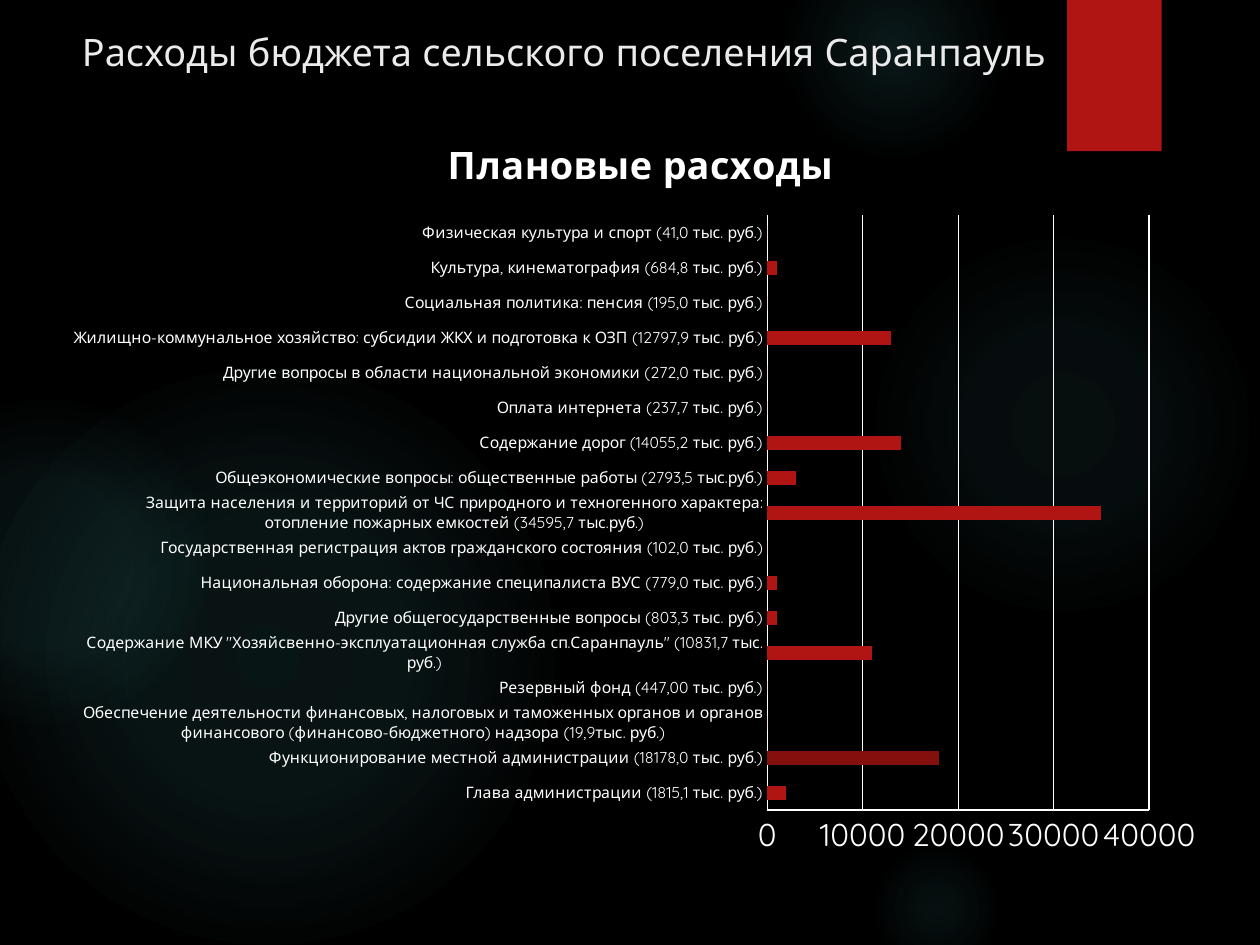
from lxml import etree
from pptx import Presentation
from pptx import util as u
from pptx.chart.data import CategoryChartData
from pptx.dml.color import RGBColor
from pptx.enum import chart as ch, shapes, text
from pptx.oxml import parse_xml
from pptx.oxml.ns import nsdecls, qn

TITLE = "Расходы бюджета сельского поселения Саранпауль"
CHART_TITLE = "Плановые расходы"
EXPENSES = [
    ("Глава администрации (1815,1 тыс. руб.)", 2000),
    ("Функционирование местной администрации (18178,0 тыс. руб.)", 18000),
    ("Обеспечение деятельности финансовых, налоговых и таможенных органов и органов "
     "финансового (финансово-бюджетного) надзора (19,9тыс. руб.)", 0),
    ("Резервный фонд (447,00 тыс. руб.)", 0),
    ('Содержание МКУ "Хозяйсвенно-эксплуатационная служба сп.Саранпауль" '
     "(10831,7 тыс. руб.)", 11000),
    ("Другие общегосударственные вопросы (803,3 тыс. руб.)", 1000),
    ("Национальная оборона: содержание специпалиста ВУС (779,0 тыс. руб.)", 1000),
    ("Государственная регистрация актов гражданского состояния (102,0 тыс. руб.)", 0),
    ("Защита населения и территорий от ЧС природного и техногенного характера: "
     "отопление пожарных емкостей (34595,7 тыс.руб.)", 35000),
    ("Общеэкономические вопросы: общественные работы (2793,5 тыс.руб.)", 3000),
    ("Содержание дорог (14055,2 тыс. руб.)", 14000),
    ("Оплата интернета (237,7 тыс. руб.)", 0),
    ("Другие вопросы в области национальной экономики (272,0 тыс. руб.)", 0),
    ("Жилищно-коммунальное хозяйство: субсидии ЖКХ и подготовка к ОЗП "
     "(12797,9 тыс. руб.)", 13000),
    ("Социальная политика: пенсия (195,0 тыс. руб.)", 0),
    ("Культура, кинематография (684,8 тыс. руб.)", 1000),
    ("Физическая культура и спорт (41,0 тыс. руб.)", 0),
]
DARK_POINT = 1
GLOWS = [
    (6.89, 1.83, 3.08, ((0, 7), (36, 6), (69, 0))),
    (6.22, -0.5, 1.75, ((0, 14), (36, 7), (73, 0))),
    (6.89, 6.67, 1.08, ((0, 9), (36, 5), (66, 0))),
    (-0.17, 2.92, 4.58, ((0, 11), (36, 10), (75, 0))),
    (-0.92, 3.17, 2.58, ((0, 8), (36, 8), (72, 0))),
]
THEME = dict(font="Quicksand", bg="000000", glow="50B9C1", accent="B01513", dark="84100E",
             title="EBEBEB", light="FFFFFF", title_size=21.6, axis_size=18, label_size=9)
CHART_BOX = (0.5, 0.86, 9.17, 6.04)
PLOT_BOX = (6.09, 1.71, 3.03, 4.72)


def rgb(name):
    return RGBColor.from_string(THEME[name])


def box(*lengths):
    return [u.Inches(v) for v in lengths]


def style(font, size, color, bold=False):
    font.name, font.size, font.bold = THEME["font"], u.Pt(THEME[size]), bold
    font.color.rgb = rgb(color)


def add_text(tf, content, size="title_size", color="title", bold=False, align=None):
    p = tf.paragraphs[0]
    p.alignment = align
    r = p.add_run()
    r.text = content
    style(r.font, size, color, bold)


def add_shape(s, kind, *lengths):
    sp = s.shapes.add_shape(kind, *box(*lengths))
    sp.shadow.inherit = False
    sp.line.fill.background()
    return sp


def add_glow(s, x, y, d, stops):
    sp = add_shape(s, shapes.MSO_SHAPE.OVAL, x, y, d, d)
    sp.fill.background()
    gs = "".join(f'<a:gs pos="{pos * 1000}"><a:srgbClr val="{THEME["glow"]}">'
                 f'<a:alpha val="{alpha * 1000}"/></a:srgbClr></a:gs>' for pos, alpha in stops)
    grad = parse_xml(f'<a:gradFill {nsdecls("a")}><a:gsLst>{gs}</a:gsLst><a:path path="circle">'
                     '<a:fillToRect l="50000" t="50000" r="50000" b="50000"/></a:path></a:gradFill>')
    no_fill = sp.element.spPr.find(qn("a:noFill"))
    no_fill.getparent().replace(no_fill, grad)


def place_plot(chart):
    area = chart.element.chart.plotArea
    for old in area.findall(qn("c:layout")):
        area.remove(old)
    layout = etree.Element(qn("c:layout"))
    manual = etree.SubElement(layout, qn("c:manualLayout"))
    cx, cy, cw, chh = CHART_BOX
    px, py, pw, ph = PLOT_BOX
    for tag, val in [("layoutTarget", "inner"), ("xMode", "edge"), ("yMode", "edge"),
                     ("x", (px - cx) / cw), ("y", (py - cy) / chh),
                     ("w", pw / cw), ("h", ph / chh)]:
        etree.SubElement(manual, qn(f"c:{tag}")).set("val", str(val))
    area.insert(0, layout)


def add_expenses(s):
    data = CategoryChartData()
    data.categories = [name for name, _ in EXPENSES]
    data.add_series(CHART_TITLE, [value for _, value in EXPENSES])
    chart = s.shapes.add_chart(ch.XL_CHART_TYPE.BAR_CLUSTERED, *box(*CHART_BOX), data).chart
    style(chart.font, "axis_size", "light")
    chart.has_legend = False
    chart.has_title = True
    add_text(chart.chart_title.text_frame, CHART_TITLE, color="light", bold=True)
    chart.chart_title.include_in_layout = False
    plot = chart.plots[0]
    plot.vary_by_categories = False
    plot.gap_width = 150
    series = plot.series[0]
    series.invert_if_negative = False
    for fill, color in [(series.format.fill, "accent"),
                        (series.points[DARK_POINT].format.fill, "dark")]:
        fill.solid()
        fill.fore_color.rgb = rgb(color)
    cat, val = chart.category_axis, chart.value_axis
    for axis, size in [(cat, "label_size"), (val, "axis_size")]:
        axis.major_tick_mark = axis.minor_tick_mark = ch.XL_TICK_MARK.NONE
        style(axis.tick_labels.font, size, "light")
        axis.format.line.color.rgb = rgb("light")
    val.minimum_scale, val.maximum_scale, val.major_unit = 0, 40000, 10000
    val.tick_labels.number_format = "General"
    val.tick_labels.number_format_is_linked = False
    val.has_major_gridlines = True
    val.major_gridlines.format.line.color.rgb = rgb("light")
    place_plot(chart)


def main():
    prs = Presentation()
    prs.slide_width, prs.slide_height = box(10, 7.5)
    s = prs.slides.add_slide(prs.slide_layouts[5])
    s.background.fill.solid()
    s.background.fill.fore_color.rgb = rgb("bg")
    for glow in GLOWS:
        add_glow(s, *glow)
    tab = add_shape(s, shapes.MSO_SHAPE.RECTANGLE, 8.47, 0, 0.75, 1.2)
    tab.fill.solid()
    tab.fill.fore_color.rgb = rgb("accent")
    title = s.shapes.title
    title.left, title.top, title.width, title.height = box(0.55, 0.16, 9, 0.48)
    title.element.getparent().append(title.element)
    tf = title.text_frame
    tf.word_wrap = True
    tf.auto_size = text.MSO_AUTO_SIZE.NONE
    tf.vertical_anchor = text.MSO_ANCHOR.BOTTOM
    add_text(tf, TITLE, align=text.PP_ALIGN.LEFT)
    add_expenses(s)
    prs.save("out.pptx")


if __name__ == "__main__":
    main()
